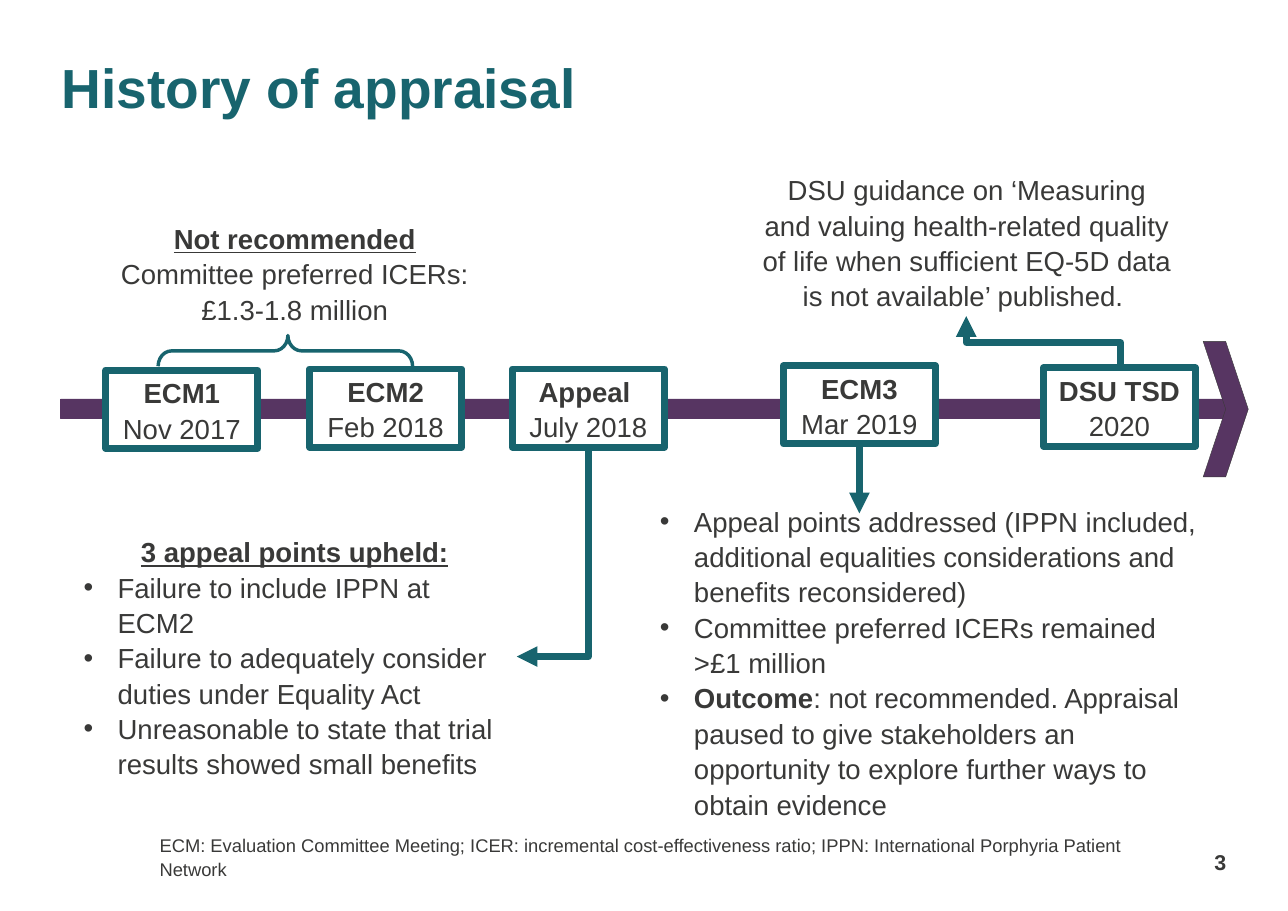
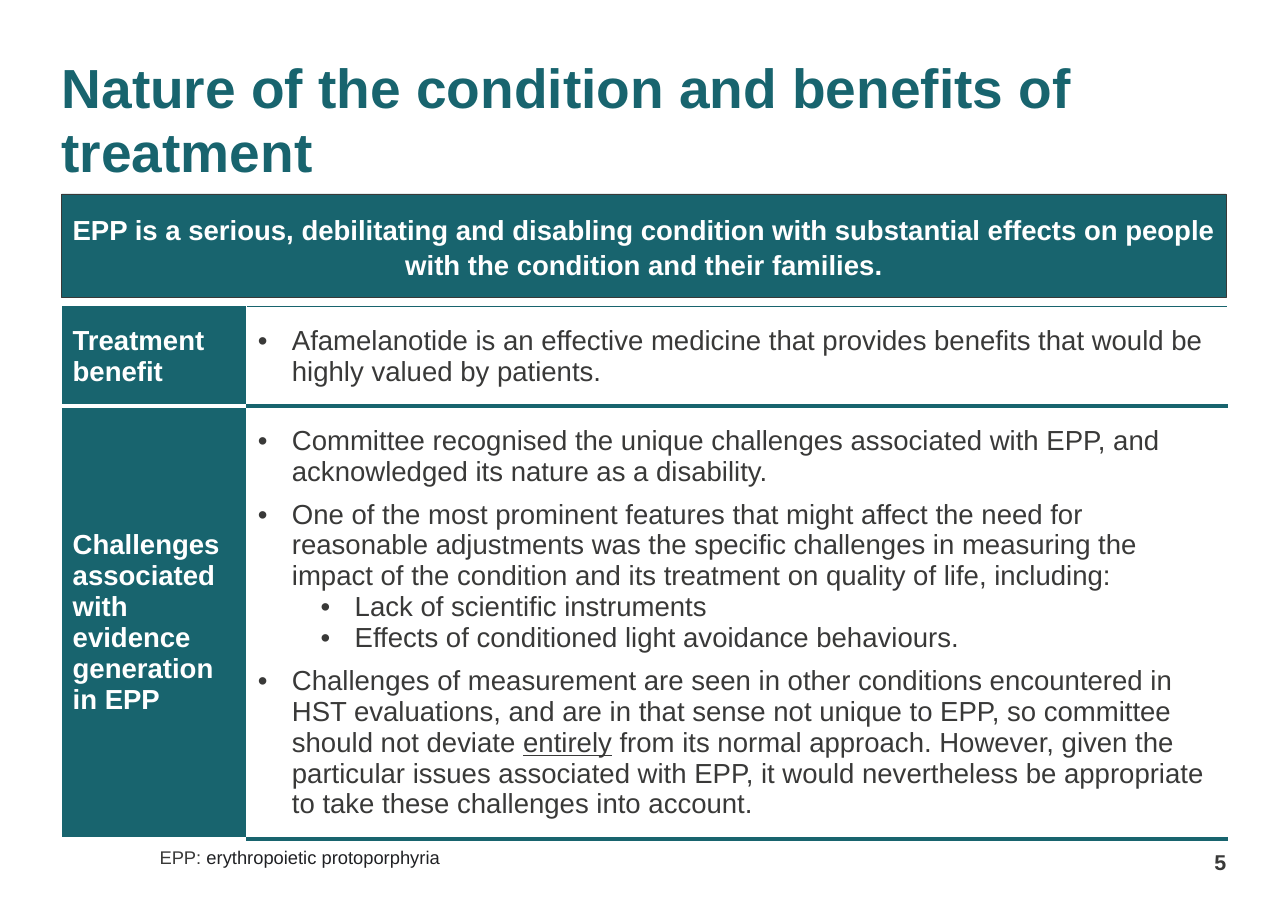
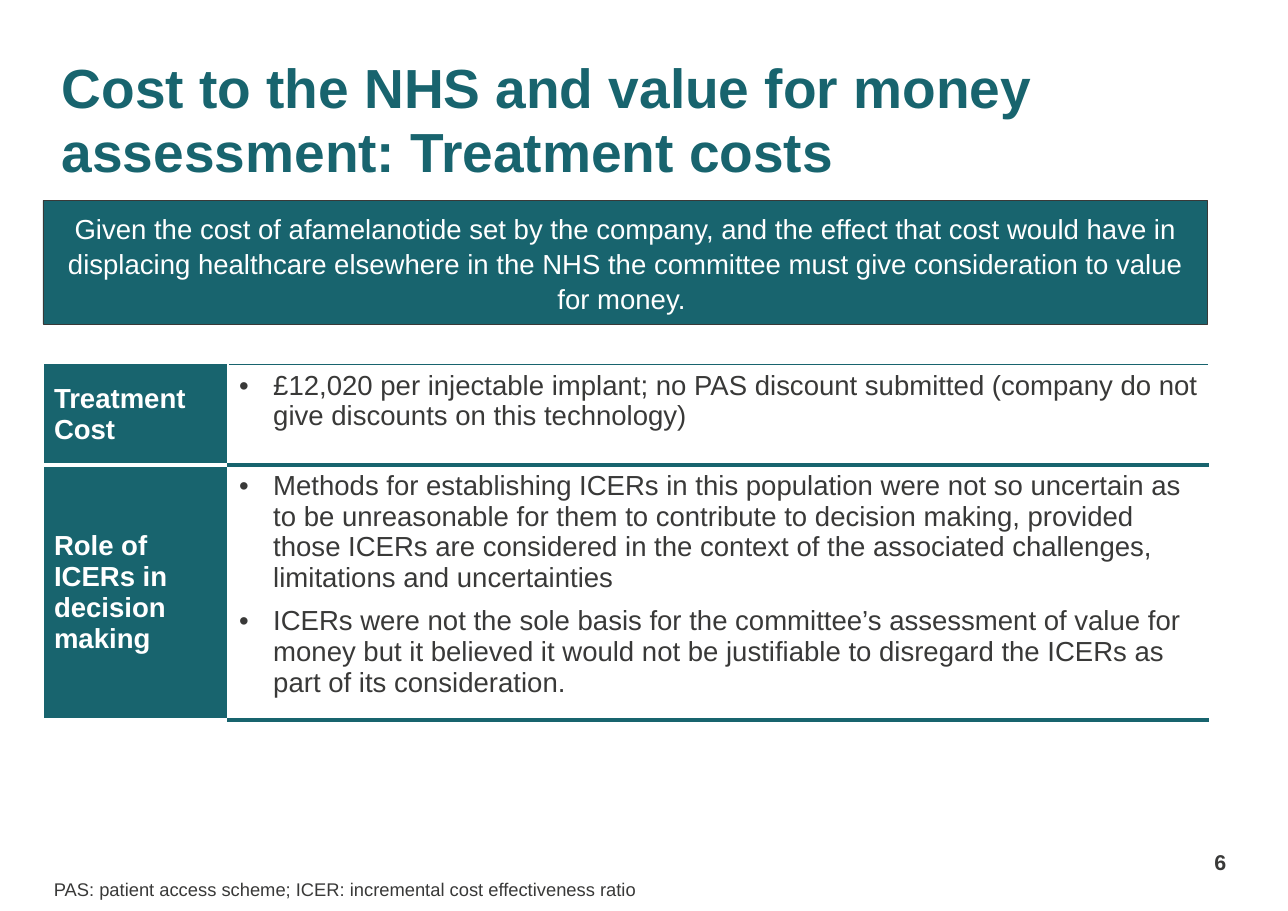
from pptx import Presentation, util as u
from pptx.dml.color import RGBColor
from pptx.enum import shapes, text
from pptx.oxml import parse_xml
from pptx.oxml.ns import nsdecls, qn

I = u.Inches
COL = {"teal": "18646E", "purple": "573562", "ink": "393938",
       "white": "FFFFFF", "black": "202124"}
RGB = {k: RGBColor.from_string(v) for k, v in COL.items()}
AL, AN = text.PP_ALIGN, text.MSO_ANCHOR
RECT = shapes.MSO_SHAPE.RECTANGLE
INDENT = 0.31
BULLET_LEFT = {"bullet": 0.31, "sub": 0.88}


def write(tf, paras, size=18, color="ink", align=None, spacing=1.07):
    """paras: (style, points after, run, ...); run: (text, marks b/u, colour)."""
    tf.word_wrap = True
    for i, (style, after, *runs) in enumerate(paras):
        p = tf.paragraphs[0] if i == 0 else tf.add_paragraph()
        p.line_spacing = spacing
        p.space_after = u.Pt(after)
        if style in BULLET_LEFT:
            pPr = p._p.get_or_add_pPr()
            pPr.set("marL", str(I(BULLET_LEFT[style])))
            pPr.set("indent", str(-I(INDENT)))
            if style == "sub":
                p.level = 1
            pPr.append(parse_xml(f'<a:buFont {nsdecls("a")} typeface="Arial"/>'))
            pPr.append(parse_xml(f'<a:buChar {nsdecls("a")} char="•"/>'))
        else:
            p.alignment = AL.CENTER if style == "center" else align
        for words, marks, *own in runs:
            r = p.add_run()
            r.text = words
            f = r.font
            f.name, f.size = "Arial", u.Pt(size)
            f.bold, f.underline = "b" in marks, "u" in marks
            f.color.rgb = RGB[own[0] if own else color]


def box(s, at, paras=(), kind=None, fill=None, line=None, width=0.25,
        anchor=AN.MIDDLE, inset=True, **style):
    """Text box, or a preset shape when kind is given."""
    at = [I(v) for v in at]
    if kind is None:
        sp = s.shapes.add_textbox(*at)
    else:
        sp = s.shapes.add_shape(kind, *at)
        sp.shadow.inherit = False
        if fill:
            sp.fill.solid()
            sp.fill.fore_color.rgb = RGB[fill]
        else:
            sp.fill.background()
        sp.line.color.rgb = RGB[line]
        sp.line.width = u.Pt(width)
    if paras:
        tf = sp.text_frame
        tf.vertical_anchor = anchor
        if not inset:
            tf.margin_left = tf.margin_right = tf.margin_top = tf.margin_bottom = 0
        write(tf, paras, **style)
    return sp


prs = Presentation()
prs.slide_width, prs.slide_height = I(11.69), I(8.27)

# Title, page number and abbreviations on every slide
PAGES = [
    ("History of appraisal", "3", (1.35, 7.5),
     [("ECM: Evaluation Committee Meeting; ICER: incremental cost-effectiveness ratio; "
       "IPPN: International Porphyria Patient Network", "")]),
    ("Nature of the condition and benefits of treatment", "5", (1.35, 7.5),
     [("EPP: ", ""), ("erythropoietic protoporphyria", "", "black")]),
    ("Cost to the NHS and value for money assessment: Treatment costs", "6", (0.39, 7.79),
     [("PAS: patient access scheme; ICER: incremental cost effectiveness ratio", "")]),
]
slides = []
for title, number, foot_at, foot in PAGES:
    s = prs.slides.add_slide(prs.slide_layouts[6])
    box(s, (0.56, 0.5, 10.57, 0.84), [("", 0, (title, "b"))], anchor=AN.TOP,
        inset=False, size=36, color="teal", spacing=u.Pt(42))
    box(s, (10.58, 7.58, 0.55, 0.36), [("", 0, (number, "b"))], anchor=AN.BOTTOM,
        inset=False, size=14, align=AL.RIGHT, spacing=1.0)
    box(s, (*foot_at, 9.23, 0.55), [("", 0, *foot)], size=12)
    slides.append(s)

# Slide 1: timeline bar, arrowhead and brace
s = slides[0]
box(s, (0.55, 3.62, 10.58, 0.18), kind=RECT, fill="purple", line="purple")
box(s, (10.92, 3.1, 0.41, 1.23), kind=shapes.MSO_SHAPE.CHEVRON, fill="purple", line="ink")
brace = box(s, (2.45, 2.03, 0.28, 2.31), kind=shapes.MSO_SHAPE.RIGHT_BRACE,
            line="teal", width=2.25)
brace.rotation = 270
brace.adjustments[0], brace.adjustments[1] = 0.44, 0.51

# Milestones
for left, top, name, date in [(0.96, 3.36, "ECM1", "Nov 2017"),
                              (2.81, 3.35, "ECM2", "Feb 2018"),
                              (4.65, 3.35, "Appeal ", "July 2018"),
                              (7.11, 3.32, "ECM3", "Mar 2019"),
                              (9.47, 3.34, "DSU TSD", "2020")]:
    box(s, (left, top, 1.38, 0.71), [("center", 0, (name, "b")), ("center", 0, (date, ""))],
        kind=RECT, fill="white", line="teal", width=4.5)

# Notes around the timeline
box(s, (0.96, 1.96, 3.43, 1.03),
    [("center", 0, ("Not recommended ", "bu"),
      ("Committee preferred ICERs: £1.3-1.8 million", ""))])
box(s, (6.81, 1.53, 3.93, 1.33),
    [("center", 0, ("DSU guidance on ‘Measuring and valuing health-related quality of life "
                    "when sufficient EQ-5D data is not available’ published. ", ""))])
box(s, (0.66, 4.89, 4.03, 2.14),
    [("center", 0, ("3 appeal points upheld:", "bu")),
     ("bullet", 0, ("Failure to include IPPN at ECM2", "")),
     ("bullet", 0, ("Failure to adequately consider duties under Equality Act", "")),
     ("bullet", 0, ("Unreasonable to state that trial results showed small benefits", ""))])
box(s, (5.89, 4.59, 5.15, 2.83),
    [("bullet", 0, ("Appeal points addressed (IPPN included, additional equalities "
                    "considerations and benefits reconsidered)", "")),
     ("bullet", 0, ("Committee preferred ICERs remained >£1 million", "")),
     ("bullet", 0, ("Outcome", "b"),
      (": not recommended. Appraisal paused to give stakeholders an opportunity "
       "to explore further ways to obtain evidence", ""))])

# Arrows from milestones to notes: left, top, width, height, turn, flip, preset
for left, top, w, h, turn, flip, preset in [
        (4.07, 4.69, 1.89, 0.65, 90, False, "bentConnector2"),
        (7.8, 4.04, 0, 0.62, 0, False, "straightConnector1"),
        (9.23, 2.41, 0.48, 1.4, 270, True, "bentConnector3")]:
    c = s.shapes.add_connector(shapes.MSO_CONNECTOR.ELBOW, I(left), I(top),
                               I(left + w), I(top + h))
    c.line.color.rgb, c.line.width = RGB["teal"], u.Pt(4.5)
    spPr = c._element.spPr
    spPr.find(qn("a:prstGeom")).set("prst", preset)
    xfrm = spPr.find(qn("a:xfrm"))
    xfrm.set("rot", str(turn * 60000))
    if flip:
        xfrm.set("flipV", "1")
    spPr.find(qn("a:ln")).append(parse_xml(f'<a:tailEnd {nsdecls("a")} type="triangle"/>'))
    spPr.append(parse_xml(f'<a:effectLst {nsdecls("a")}/>'))

# Slides 2 and 3: banner above a two-row table
# slide, left, banner (top, height, text, marks), table top, row heights, body anchor, rows
PANELS = [
    (slides[1], 0.56,
     (1.76, 0.94, "EPP is a serious, debilitating and disabling condition with substantial "
      "effects on people with the condition and their families.", "b"),
     2.78, (0.91, 3.33), AN.MIDDLE,
     [("Treatment benefit",
       [("bullet", 0, ("Afamelanotide is an effective medicine that provides benefits that "
                       "would be highly valued by patients.", ""))]),
      ("Challenges associated with evidence generation in EPP",
       [("bullet", 8, ("Committee recognised the unique challenges associated with EPP, and "
                       "acknowledged its nature as a disability.", "")),
        ("bullet", 0, ("One of the most prominent features that might affect the need for "
                       "reasonable adjustments was the specific challenges in measuring the "
                       "impact of the condition and its treatment on quality of life, "
                       "including:", "")),
        ("sub", 0, ("Lack of scientific instruments", "")),
        ("sub", 8, ("Effects of conditioned light avoidance behaviours.", "")),
        ("bullet", 0, ("Challenges of measurement are seen in other conditions encountered in "
                       "HST evaluations, and are in that sense not unique to EPP, so committee "
                       "should not deviate ", ""), ("entirely", "u"),
         (" from its normal approach. However, given the particular issues associated with "
          "EPP, it would nevertheless be appropriate to take these challenges into account.",
          ""))])]),
    (slides[2], 0.39,
     (1.82, 1.12, "Given the cost of afamelanotide set by the company, and the effect that cost "
      "would have in displacing healthcare elsewhere in the NHS the committee must give "
      "consideration to value for money. ", ""),
     3.31, (0.91, 2.32), AN.TOP,
     [("Treatment Cost",
       [("bullet", 0, ("£12,020 per injectable implant; no PAS discount submitted (company do "
                       "not give discounts on this technology)", ""))]),
      ("Role of ICERs in decision making",
       [("bullet", 8, ("Methods for establishing ICERs in this population were not so uncertain "
                       "as to be unreasonable for them to contribute to decision making, "
                       "provided those ICERs are considered in the context of the associated "
                       "challenges, limitations and uncertainties", "")),
        ("bullet", 8, ("ICERs were not the sole basis for the committee’s assessment of value "
                       "for money but it believed it would not be justifiable to disregard the "
                       "ICERs as part of its consideration.", ""))])]),
]
for s, left, (top, height, words, marks), table_top, heights, body_anchor, rows in PANELS:
    tbl = s.shapes.add_table(2, 2, I(left), I(table_top), I(10.57), I(sum(heights))).table
    tbl.first_row = tbl.horz_banding = False
    for col, w in zip(tbl.columns, (1.68, 8.9)):
        col.width = I(w)
    for i, (label, body) in enumerate(rows):
        tbl.rows[i].height = I(heights[i])
        cells = [([("", 0, (label, "b"))], "white", "teal", "white", AN.MIDDLE),
                 (body, "ink", "white", "teal", body_anchor)]
        for j, (paras, color, fill, rule, anchor) in enumerate(cells):
            cell = tbl.cell(i, j)
            cell.vertical_anchor = anchor
            cell.fill.solid()
            cell.fill.fore_color.rgb = RGB[fill]
            write(cell.text_frame, paras, color=color, spacing=1.0)
            upper = ("teal", 1) if i == 0 else (rule, 3)
            edges = [("L", "white", 1), ("R", "white", 1), ("T", *upper), ("B", rule, 3)]
            tcPr = cell._tc.get_or_add_tcPr()
            for n, (side, edge, pt) in enumerate(edges):
                tcPr.insert(n, parse_xml(
                    f'<a:ln{side} {nsdecls("a")} w="{u.Pt(pt)}"><a:solidFill>'
                    f'<a:srgbClr val="{COL[edge]}"/></a:solidFill></a:ln{side}>'))
    box(s, (left, top, 10.57, height), [("center", 0, (words, marks))],
        kind=RECT, fill="teal", line="ink", color="white")

prs.save("out.pptx")
